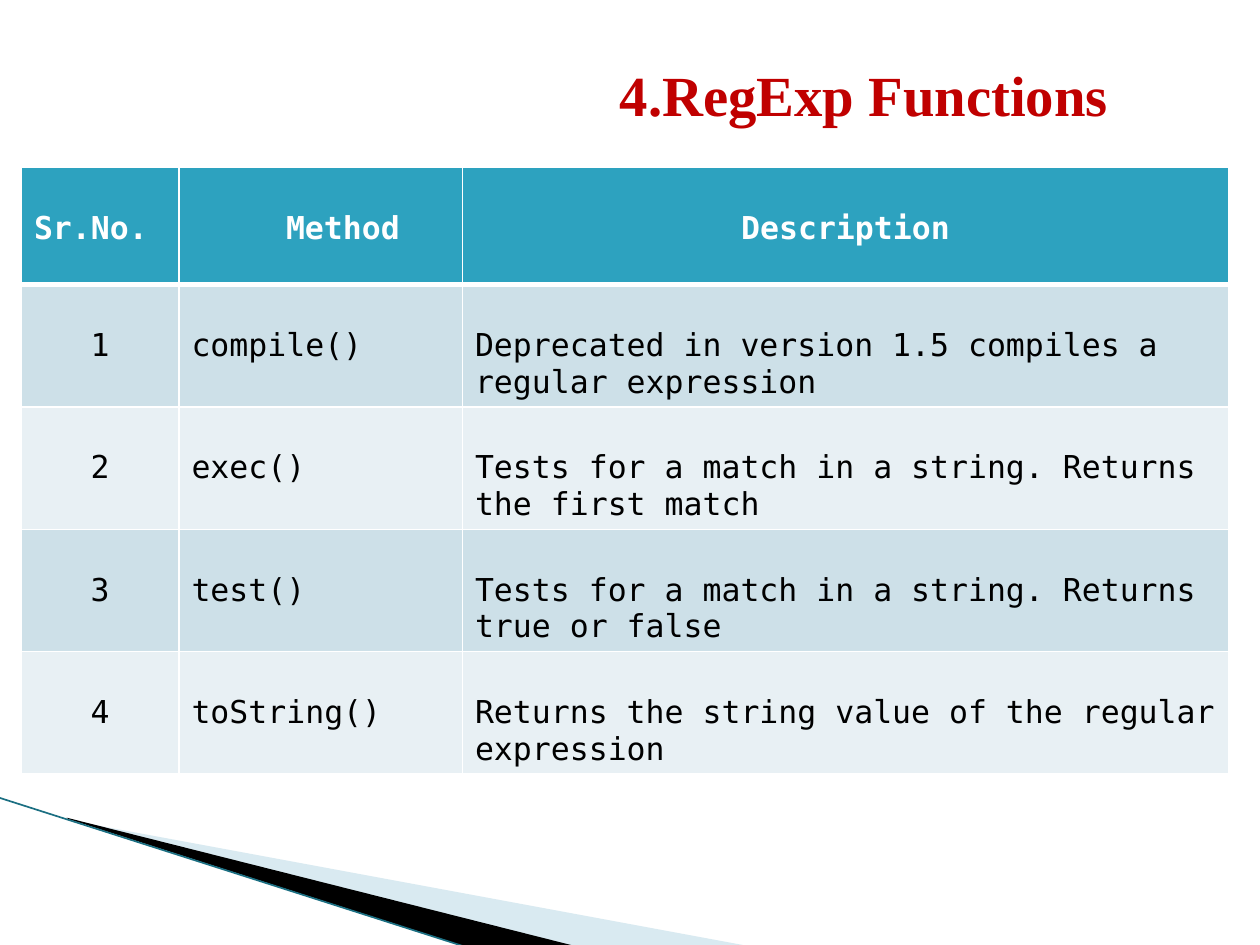
from lxml import etree
from pptx import Presentation
from pptx.dml.color import RGBColor
from pptx.enum.shapes import MSO_CONNECTOR
from pptx.enum.text import MSO_ANCHOR, PP_ALIGN
from pptx.oxml.ns import qn
from pptx.util import Inches, Pt

LEFT, CENTER = PP_ALIGN.LEFT, PP_ALIGN.CENTER
MIDDLE = MSO_ANCHOR.MIDDLE
STRAIGHT = MSO_CONNECTOR.STRAIGHT

COLORS = {
    "title": "C00000",
    "header": "2DA2BF",
    "band_dark": "CDE0E8",
    "band_light": "E8F0F4",
    "white": "FFFFFF",
    "black": "000000",
    "pale_wedge": "A0CBDC",
    "edge_line": "1B6F82",
}
MONO, SERIF = "DejaVu Sans Mono", "Times New Roman"

COLUMN_WIDTHS = [1.25, 2.25, 6.08]
HEADER_HEIGHT, BODY_HEIGHT = 0.93, 0.97
ROWS = [
    ("Sr.No.", "Method", "Description"),
    ("1", "compile()", "Deprecated in version 1.5 compiles a regular expression"),
    ("2", "exec()", "Tests for a match in a string. Returns the first match"),
    ("3", "test()", "Tests for a match in a string. Returns true or false"),
    ("4", "toString()", "Returns the string value of the regular expression"),
]
HEADER_ALIGNMENTS = [LEFT, LEFT, CENTER]
BODY_ALIGNMENTS = [CENTER, LEFT, LEFT]
HEADER_INDENTS = [0.1, 0.85, 0.1]
BODY_INDENTS = [0.1, 0.1, 0.1]


def rgb(name):
    return RGBColor.from_string(COLORS[name])


def write_text(text_frame, text, *, font, size, color, bold=False, align=LEFT):
    paragraph = text_frame.paragraphs[0]
    paragraph.alignment = align
    run = paragraph.add_run()
    run.text = text
    run.font.name = font
    run.font.size = Pt(size)
    run.font.bold = bold
    run.font.color.rgb = rgb(color)


def add_title(slide, text):
    box = slide.shapes.add_textbox(Inches(0.5), Inches(0.3), Inches(9), Inches(0.78))
    frame = box.text_frame
    frame.word_wrap = True
    frame.vertical_anchor = MIDDLE
    frame.margin_left = Inches(4.42)
    frame.margin_top = Inches(0.16)
    write_text(frame, text, font=SERIF, size=32.4, color="title", bold=True)


def add_wedge(slide, points, color, opacity=None):
    """Draw a filled polygon; opacity is a percentage."""
    builder = slide.shapes.build_freeform(
        Inches(points[0][0]), Inches(points[0][1]), scale=1.0)
    builder.add_line_segments([(Inches(x), Inches(y)) for x, y in points[1:]])
    wedge = builder.convert_to_shape()
    wedge.shadow.inherit = False
    wedge.fill.solid()
    wedge.fill.fore_color.rgb = rgb(color)
    wedge.line.fill.background()
    if opacity is not None:
        fill_color = wedge.element.spPr.find(qn("a:solidFill"))[0]
        etree.SubElement(fill_color, qn("a:alpha"), val=str(opacity * 1000))


def add_line(slide, start, end, color, width):
    line = slide.shapes.add_connector(
        STRAIGHT, *(Inches(value) for value in (*start, *end)))
    line.line.color.rgb = rgb(color)
    line.line.width = Pt(width)
    etree.SubElement(line.element.spPr, qn("a:effectLst"))


def set_borders(cell, widths):
    """Give the cell white borders; widths maps an XML side tag to points."""
    properties = cell._tc.get_or_add_tcPr()
    for index, (side, width) in enumerate(widths.items()):
        border = etree.Element(qn(f"a:{side}"), w=str(Pt(width)))
        fill = etree.SubElement(border, qn("a:solidFill"))
        etree.SubElement(fill, qn("a:srgbClr"), val=COLORS["white"])
        properties.insert(index, border)


def format_cell(cell, text, row, column):
    is_header = row == 0
    if is_header:
        fill = "header"
    else:
        fill = "band_dark" if row % 2 else "band_light"
    cell.fill.solid()
    cell.fill.fore_color.rgb = rgb(fill)
    indents = HEADER_INDENTS if is_header else BODY_INDENTS
    cell.margin_left = Inches(indents[column])
    cell.margin_top = Inches(0.34)
    alignments = HEADER_ALIGNMENTS if is_header else BODY_ALIGNMENTS
    write_text(cell.text_frame, text, font=MONO, size=18,
               color="white" if is_header else "black",
               bold=is_header, align=alignments[column])
    set_borders(cell, {"lnL": 1, "lnR": 1,
                       "lnT": 3 if row == 1 else 1,
                       "lnB": 3 if is_header else 1})


def add_method_table(slide):
    heights = [HEADER_HEIGHT] + [BODY_HEIGHT] * (len(ROWS) - 1)
    table = slide.shapes.add_table(
        len(ROWS), len(COLUMN_WIDTHS), Inches(0.17), Inches(1.33),
        Inches(sum(COLUMN_WIDTHS)), Inches(sum(heights))).table
    table.horz_banding = False
    for column, width in zip(table.columns, COLUMN_WIDTHS):
        column.width = Inches(width)
    for table_row, height in zip(table.rows, heights):
        table_row.height = Inches(height)
    for row, texts in enumerate(ROWS):
        for column, text in enumerate(texts):
            format_cell(table.cell(row, column), text, row, column)


def main():
    presentation = Presentation()
    presentation.slide_width = Inches(10)
    presentation.slide_height = Inches(7.5)
    slide = presentation.slides.add_slide(presentation.slide_layouts[6])

    add_wedge(slide, [(0.55, 6.51), (5.95, 7.51), (4.56, 7.51), (0.55, 6.5)],
              "pale_wedge", opacity=40)
    add_wedge(slide, [(0.53, 6.49), (4.57, 7.51), (3.72, 7.52), (0.54, 6.5)], "black")
    add_line(slide, (-0.01, 6.33), (3.71, 7.52), "edge_line", 0.95)
    add_method_table(slide)
    add_title(slide, "4.RegExp Functions")

    presentation.save("out.pptx")


if __name__ == "__main__":
    main()
